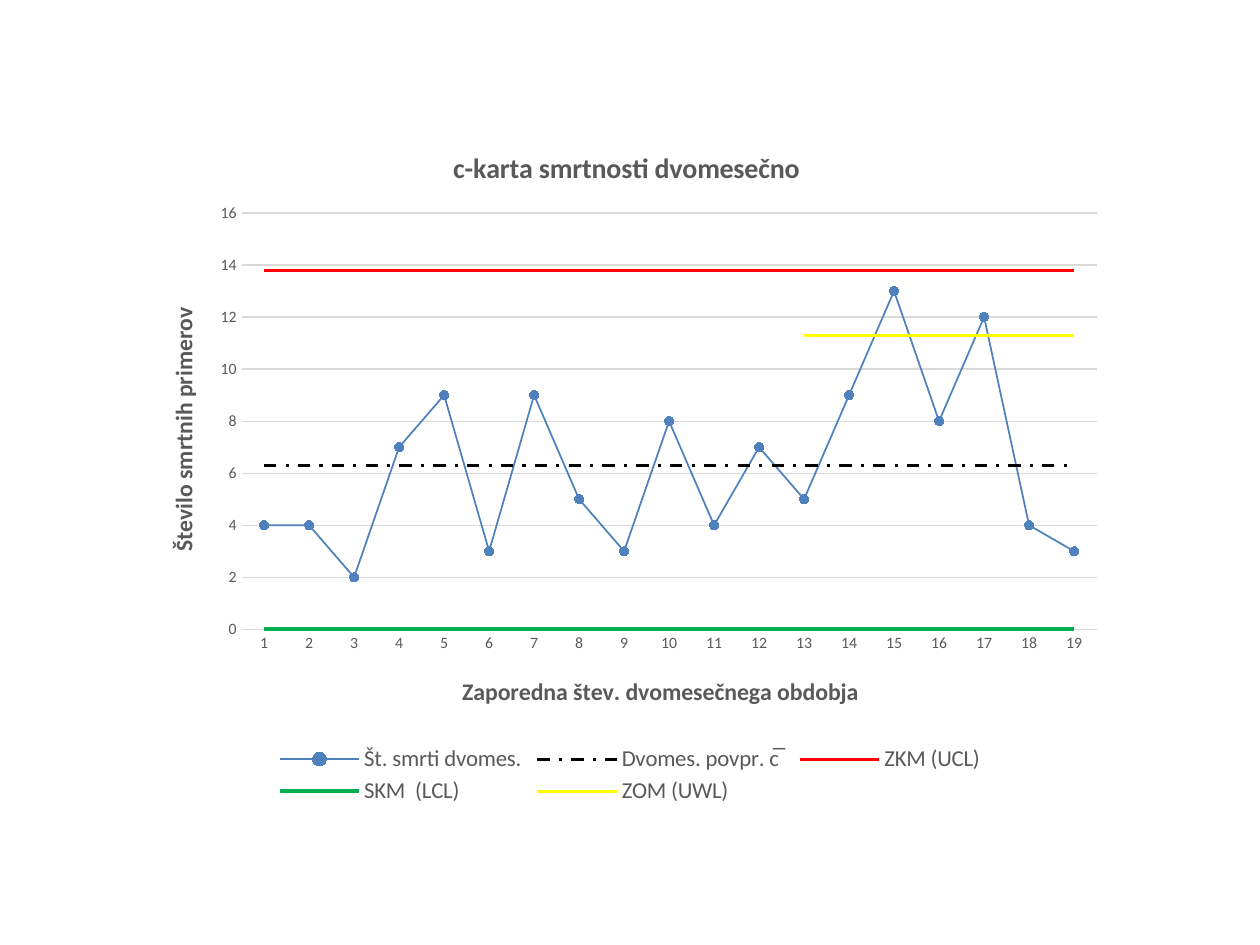
import pptx
import pptx.chart.data
import pptx.dml.color
import pptx.enum.chart
import pptx.enum.dml
import pptx.util
from lxml import etree

Pt = pptx.util.Pt
GREY, GRID = "595959", "D9D9D9"
PERIODS = 19
DEATHS = [4, 4, 2, 7, 9, 3, 9, 5, 3, 8, 4, 7, 5, 9, 13, 8, 12, 4, 3]
WARNING_START = 12

# name, values, colour, line width, dash
SERIES = [
    ("Št. smrti dvomes.", DEATHS, "4F81BD", 1, None),
    ("Dvomes. povpr. c̅ ", [6.3] * PERIODS, "000000", 1.75, "DASH_DOT"),
    ("ZKM (UCL)", [13.8] * PERIODS, "FF0000", 1.75, None),
    ("SKM  (LCL)", [0] * PERIODS, "00B050", 2.25, None),
    ("ZOM (UWL)", [None] * WARNING_START + [11.3] * (PERIODS - WARNING_START),
     "FFFF00", 1.75, None),
]
CHART_TITLE = ("c-karta smrtnosti dvomesečno", 16)
PERIOD_TITLE = ("Zaporedna štev. dvomesečnega obdobja", 13.6)
DEATHS_TITLE = ("Število smrtnih primerov", 13.5)

# Fractions of the chart area
TITLE_PLACES = [dict(x=0.32, y=0.04), dict(x=0.33, y=0.8), dict(x=0.03, y=0.27)]
PLOT_PLACE = dict(x=0.11, y=0.14, w=0.87, h=0.6)
LEGEND_PLACE = dict(x=0.14, y=0.9, w=0.73, h=0.1)


def rgb(value):
    return pptx.dml.color.RGBColor.from_string(value)


def style_font(font, size, bold=False):
    for key, value in dict(name="Calibri", size=Pt(size), bold=bold).items():
        setattr(font, key, value)
    font.color.rgb = rgb(GREY)


def style_line(line, colour, width):
    line.color.rgb = rgb(colour)
    line.width = Pt(width)


def write_title(owner, text, size):
    owner.has_title = True
    title = owner.chart_title if hasattr(owner, "chart_title") else owner.axis_title
    paragraph = title.text_frame.paragraphs[0]
    run = paragraph.add_run()
    run.text = text
    style_font(run.font, size, True)


def place(part, fractions, after=None, inner=False):
    """Give a chart part a manual layout, following its child named after."""
    ns = part.nsmap["c"]
    for old in part.findall(f"{{{ns}}}layout"):
        part.remove(old)
    layout = etree.Element(f"{{{ns}}}layout")
    manual = etree.SubElement(layout, f"{{{ns}}}manualLayout")
    settings = {"layoutTarget": "inner"} if inner else {}
    settings.update(xMode="edge", yMode="edge", **fractions)
    for tag, value in settings.items():
        etree.SubElement(manual, f"{{{ns}}}{tag}").set("val", str(value))
    position = 0 if after is None else part.index(part.find(f"{{{ns}}}{after}")) + 1
    part.insert(position, layout)


deck = pptx.Presentation()
deck.slide_width, deck.slide_height = Pt(720), Pt(540)
slide = deck.slides.add_slide(deck.slide_layouts[6])

data = pptx.chart.data.CategoryChartData()
data.categories = [str(n) for n in range(1, PERIODS + 1)]
for name, values, *_ in SERIES:
    data.add_series(name, values)
chart = slide.shapes.add_chart(
    pptx.enum.chart.XL_CHART_TYPE.LINE_MARKERS,
    Pt(76.3), Pt(66.2), Pt(561.6), Pt(396.7), data).chart
chart.font.name = "Calibri"
chart.font.size = Pt(10)
chart.plots[0].vary_by_categories = False

for series, (_, _, colour, width, dash) in zip(chart.plots[0].series, SERIES):
    series.smooth = False
    style_line(series.format.line, colour, width)
    if dash:
        series.format.line.dash_style = pptx.enum.dml.MSO_LINE[dash]
    series.marker.style = pptx.enum.chart.XL_MARKER_STYLE.NONE

deaths_marker = chart.plots[0].series[0].marker
deaths_marker.style = pptx.enum.chart.XL_MARKER_STYLE.CIRCLE
deaths_marker.size = 5
deaths_marker.format.fill.solid()
deaths_marker.format.fill.fore_color.rgb = rgb(SERIES[0][2])
style_line(deaths_marker.format.line, SERIES[0][2], 0.75)

period_axis, deaths_axis = chart.category_axis, chart.value_axis
for axis in (period_axis, deaths_axis):
    axis.major_tick_mark = axis.minor_tick_mark = pptx.enum.chart.XL_TICK_MARK.NONE
    style_font(axis.tick_labels.font, 9)
style_line(period_axis.format.line, GRID, 0.75)
deaths_axis.format.line.fill.background()
style_line(deaths_axis.major_gridlines.format.line, GRID, 0.75)
for key, value in dict(minimum_scale=0, maximum_scale=16, major_unit=2).items():
    setattr(deaths_axis, key, value)
deaths_axis.tick_labels.number_format = "0"
deaths_axis.tick_labels.number_format_is_linked = False

write_title(chart, *CHART_TITLE)
write_title(period_axis, *PERIOD_TITLE)
write_title(deaths_axis, *DEATHS_TITLE)
turned = deaths_axis.axis_title.element.xpath(".//a:bodyPr")[0]
turned.set("rot", "-5400000")
turned.set("vert", "horz")

chart.has_legend = True
chart.legend.position = pptx.enum.chart.XL_LEGEND_POSITION.BOTTOM
chart.legend.include_in_layout = False
style_font(chart.legend.font, 13)

for title, fractions in zip(chart.element.xpath(".//c:title"), TITLE_PLACES):
    place(title, fractions, after="tx")
place(chart.element.xpath(".//c:plotArea")[0], PLOT_PLACE, inner=True)
place(chart.element.xpath(".//c:legend")[0], LEGEND_PLACE, after="legendPos")

deck.save("out.pptx")
